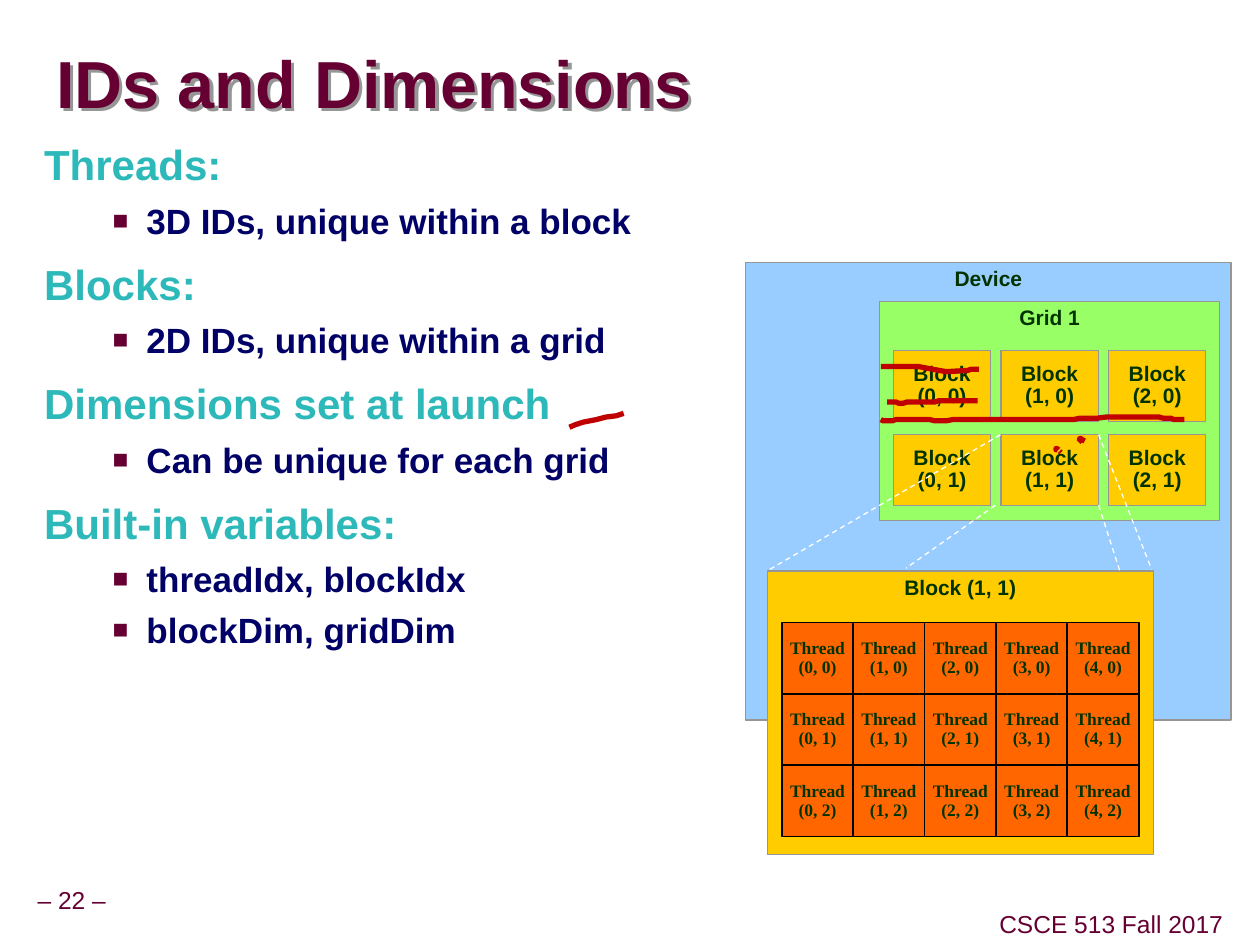
import pptx
import pptx.util
import pptx.dml.color
import pptx.enum.dml
import pptx.enum.shapes
import pptx.enum.text
import pptx.oxml
import pptx.oxml.ns
import lxml.etree

Pt = pptx.util.Pt
RGBColor = pptx.dml.color.RGBColor
ALIGN = pptx.enum.text.PP_ALIGN
ANCHOR = pptx.enum.text.MSO_ANCHOR
qn = pptx.oxml.ns.qn

MAROON = RGBColor(0x66, 0x00, 0x33)
TEAL = RGBColor(0x2D, 0xB9, 0xB9)
NAVY = RGBColor(0x00, 0x00, 0x66)
DARK_GREEN = RGBColor(0x00, 0x33, 0x00)
SKY = RGBColor(0x99, 0xCC, 0xFF)
LIME = RGBColor(0x99, 0xFF, 0x66)
GOLD = RGBColor(0xFF, 0xCC, 0x00)
ORANGE = RGBColor(0xFF, 0x66, 0x00)
GREY = RGBColor(0x96, 0x96, 0x96)
BLACK = RGBColor(0x00, 0x00, 0x00)
WHITE = RGBColor(0xFF, 0xFF, 0xFF)
RED = RGBColor(0xC0, 0x00, 0x00)

TITLE = "IDs and Dimensions"
TOPICS = [
    ("Threads:", ["3D IDs, unique within a block"]),
    ("Blocks:", ["2D IDs, unique within a grid"]),
    ("Dimensions set at launch", ["Can be unique for each grid"]),
    ("Built-in variables:", ["threadIdx, blockIdx", "blockDim, gridDim"]),
]
FOOTERS = [
    ("– 22 –", (17.3, 504, 47.5, 22.3)),
    ("CSCE 513 Fall 2017", (567, 517.7, 136, 22.3)),
]
DEVICE = ("Device", (426.2, 150, 277.2, 261.4), SKY)
GRID = ("Grid 1", (502.6, 172.3, 194.4, 125.3), LIME)
DETAIL = ("Block (1, 1)", (438.5, 326.2, 220.5, 162), GOLD)

BLOCK_COLUMNS, BLOCK_ROWS = 3, 2
BLOCK_LEFT, BLOCK_TOP = 510.5, 200.2
BLOCK_WIDTH, BLOCK_HEIGHT = 55.6, 40.8
BLOCK_STEP_X, BLOCK_STEP_Y = 61.5, 48

THREAD_COLUMNS, THREAD_ROWS = 5, 3
THREAD_LEFT, THREAD_TOP, THREAD_CELL = 446.7, 355.7, 40.8

ZOOM_LINES = [
    (571.7, 248.4, 438.5, 326.2),
    (627.8, 248.4, 658.1, 325.4),
    (568.8, 288.7, 517.7, 324.7),
    (627.8, 288.7, 640.1, 326.9),
]
PEN_STROKES = [
    [(325.4, 244.1), (329, 242.6), (333.4, 241.2), (340.6, 239.8),
     (346.3, 238.3), (352.1, 237.6), (356.4, 236.2)],
    [(616.3, 252.7), (617, 252), (617, 251.3)],
    [(619.9, 252), (618.5, 251.3), (617.8, 250.6), (617, 250.6), (617, 251.3)],
    [(604.8, 257), (604.1, 256.3), (603.4, 256.3), (603.4, 257), (604.1, 257)],
    [(606.2, 258.5), (605.5, 257.8)],
    [(503.3, 209.5), (524.9, 209.5), (532.8, 211), (540.7, 212.4),
     (553, 211.7), (555.1, 211), (559.4, 211)],
    [(506.9, 229.7), (511.9, 229.7), (513.4, 230.4), (516.2, 230.4),
     (518.4, 229.7), (534.2, 229.7), (536.4, 229), (558.7, 229)],
    [(503.3, 239.8), (504.7, 240.5), (509.8, 240.5), (511.9, 239.8),
     (531.4, 239.8), (534.2, 240.5), (540.7, 240.5), (544.3, 239.8),
     (613.4, 239.8), (617, 239), (627.1, 239), (632.2, 238.3),
     (662.4, 238.3), (664.6, 239), (668.9, 239), (671, 239.8), (676.8, 239.8)],
]


def place(shape, left, top, width, height):
    shape.left, shape.top = Pt(left), Pt(top)
    shape.width, shape.height = Pt(width), Pt(height)


def set_margins(frame, left, top, right, bottom):
    frame.margin_left, frame.margin_top = Pt(left), Pt(top)
    frame.margin_right, frame.margin_bottom = Pt(right), Pt(bottom)


def set_font(paragraph, size, color, bold=True, name="Arial"):
    font = paragraph.font
    font.name, font.size, font.bold = name, Pt(size), bold
    font.color.rgb = color


def write_centred(frame, lines, size, color, bold=True, name="Arial"):
    for index, line in enumerate(lines):
        paragraph = frame.paragraphs[0] if index == 0 else frame.add_paragraph()
        paragraph.text = line
        paragraph.alignment = ALIGN.CENTER
        paragraph.line_spacing = 0.9
        set_font(paragraph, size, color, bold, name)


def add_text(page, lines, bounds, margin, *style):
    box = page.shapes.add_textbox(*map(Pt, bounds))
    frame = box.text_frame
    frame.word_wrap = False
    frame.vertical_anchor = ANCHOR.MIDDLE
    set_margins(frame, *[margin] * 4)
    write_centred(frame, lines, *style)


def add_panel(page, lines, bounds, fill, line=GREY, weight=0.75, margins=(7.2, 3.6, 7.2, 3.6)):
    panel = page.shapes.add_shape(pptx.enum.shapes.MSO_SHAPE.RECTANGLE, *map(Pt, bounds))
    panel.shadow.inherit = False
    panel.fill.solid()
    panel.fill.fore_color.rgb = fill
    panel.line.color.rgb = line
    panel.line.width = Pt(weight)
    panel.text_frame.vertical_anchor = ANCHOR.TOP
    set_margins(panel.text_frame, *margins)
    write_centred(panel.text_frame, lines, 12, DARK_GREEN)


def add_line(page, ends, color, weight, dashed=False):
    line = page.shapes.add_connector(pptx.enum.shapes.MSO_CONNECTOR.STRAIGHT, *map(Pt, ends))
    line.line.color.rgb = color
    line.line.width = Pt(weight)
    if dashed:
        line.line.dash_style = pptx.enum.dml.MSO_LINE.DASH
    lxml.etree.SubElement(line._element.spPr, qn("a:effectLst"))


def add_stroke(page, points):
    start, *rest = [(Pt(x), Pt(y)) for x, y in points]
    builder = page.shapes.build_freeform(*start)
    builder.add_line_segments(rest, close=False)
    stroke = builder.convert_to_shape()
    stroke.shadow.inherit = False
    stroke.fill.background()
    stroke.line.color.rgb = RED
    stroke.line.width = Pt(3)


def add_bullet(paragraph, symbol=None):
    properties = paragraph._p.get_or_add_pPr()
    indent, hanging = (58.5, -19.4) if symbol else (30.2, -30.2)
    properties.set("marL", str(Pt(indent)))
    properties.set("indent", str(Pt(hanging)))
    if symbol is None:
        lxml.etree.SubElement(properties, qn("a:buNone"))
        return
    color = lxml.etree.SubElement(properties, qn("a:buClr"))
    lxml.etree.SubElement(color, qn("a:srgbClr"), val=str(MAROON))
    lxml.etree.SubElement(properties, qn("a:buSzPct"), val="75000")
    lxml.etree.SubElement(properties, qn("a:buFont"), typeface="Arial")
    lxml.etree.SubElement(properties, qn("a:buChar"), char=symbol)


def fill_title(title):
    place(title, 32, 19.4, 686.2, 61.2)
    frame = title.text_frame
    frame.text = TITLE
    frame.vertical_anchor = ANCHOR.MIDDLE
    frame.auto_size = pptx.enum.text.MSO_AUTO_SIZE.NONE
    set_margins(frame, 0, 0, 0, 0)
    paragraph = frame.paragraphs[0]
    paragraph.alignment = ALIGN.LEFT
    paragraph.line_spacing = 0.87
    set_font(paragraph, 38, MAROON)
    title.fill.background()
    effects = lxml.etree.SubElement(title._element.spPr, qn("a:effectLst"))
    shadow = lxml.etree.SubElement(effects, qn("a:outerShdw"), dist=str(Pt(2.8)), dir="2700000")
    lxml.etree.SubElement(shadow, qn("a:srgbClr"), val=str(GREY))


def fill_body(body):
    place(body, 18, 77.8, 648, 372.2)
    frame = body.text_frame
    frame.auto_size = pptx.enum.text.MSO_AUTO_SIZE.NONE
    frame.vertical_anchor = ANCHOR.TOP
    set_margins(frame, 7.2, 3.6, 7.2, 3.6)
    lines = [(level, text) for heading, items in TOPICS
             for level, text in [(0, heading)] + [(1, item) for item in items]]
    for index, (level, text) in enumerate(lines):
        paragraph = frame.paragraphs[0] if index == 0 else frame.add_paragraph()
        paragraph.text = text
        paragraph.level = level
        add_bullet(paragraph, "■" if level else None)
        paragraph.alignment = ALIGN.LEFT
        paragraph.line_spacing = 1.0 if level else 0.95
        paragraph.space_before = Pt(0 if index == 0 else 5 if level else 12)
        set_font(paragraph, 20 if level else 24, NAVY if level else TEAL)


def draw_blocks(page):
    for row in range(BLOCK_ROWS):
        for column in range(BLOCK_COLUMNS):
            bounds = (BLOCK_LEFT + column * BLOCK_STEP_X, BLOCK_TOP + row * BLOCK_STEP_Y,
                      BLOCK_WIDTH, BLOCK_HEIGHT)
            add_panel(page, ["Block", f"({column}, {row})"], bounds, GOLD, margins=(0, 7.2, 0, 0))


def draw_threads(page):
    width, height = THREAD_COLUMNS * THREAD_CELL, THREAD_ROWS * THREAD_CELL
    right, bottom = THREAD_LEFT + width, THREAD_TOP + height
    add_panel(page, [], (THREAD_LEFT, THREAD_TOP, width, height), ORANGE, BLACK, 1)
    for row in range(1, THREAD_ROWS):
        y = THREAD_TOP + row * THREAD_CELL
        add_line(page, (THREAD_LEFT, y, right, y), BLACK, 1)
    for column in range(1, THREAD_COLUMNS):
        x = THREAD_LEFT + column * THREAD_CELL
        add_line(page, (x, THREAD_TOP, x, bottom), BLACK, 1)
    for row in range(THREAD_ROWS):
        for column in range(THREAD_COLUMNS):
            bounds = (THREAD_LEFT + column * THREAD_CELL, THREAD_TOP + row * THREAD_CELL,
                      THREAD_CELL, THREAD_CELL)
            add_text(page, ["Thread", f"({column}, {row})"], bounds, 0,
                     10, DARK_GREEN, True, "Times New Roman")


def main():
    deck = pptx.Presentation()
    deck.slide_width, deck.slide_height = Pt(720), Pt(540)
    page = deck.slides.add_slide(deck.slide_layouts[1])
    for text, bounds in FOOTERS:
        add_text(page, [text], bounds, 3.6, 14, MAROON, False)
    fill_title(page.shapes.title)
    fill_body(page.placeholders[1])
    for label, bounds, fill in (DEVICE, GRID):
        add_panel(page, [label], bounds, fill)
    draw_blocks(page)
    label, bounds, fill = DETAIL
    add_panel(page, [label], bounds, fill)
    draw_threads(page)
    for ends in ZOOM_LINES:
        add_line(page, ends, WHITE, 0.75, dashed=True)
    for points in PEN_STROKES:
        add_stroke(page, points)
    deck.save("out.pptx")


if __name__ == "__main__":
    main()
